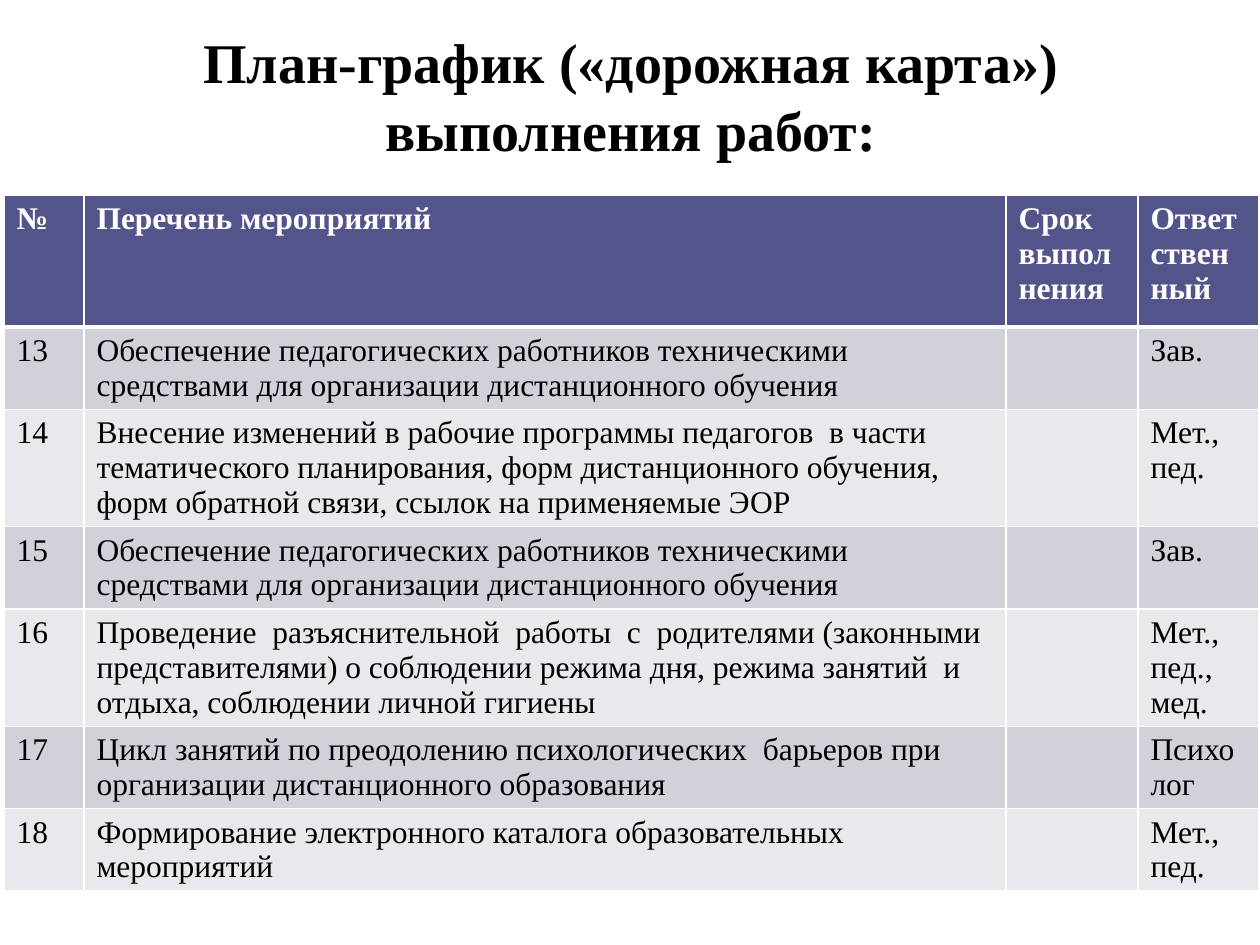
from dataclasses import dataclass

from lxml.etree import SubElement
from pptx import Presentation
from pptx.dml.color import RGBColor as Color
from pptx.enum.text import MSO_ANCHOR as Anchor, PP_ALIGN as Align
from pptx.oxml.ns import qn
from pptx.util import Emu, Pt

SCALE = 914400 / 126


@dataclass(frozen=True)
class Theme:
    font: str = "Times New Roman"
    title_size: int = 32
    table_size: int = 18
    ink: str = "000000"
    white: str = "FFFFFF"
    header: str = "53548A"
    bands: tuple = ("D1D1DA", "E9E9ED")
    line: int = 1
    header_line: int = 3


def px(length):
    return Emu(round(length * SCALE))


def format_text(frame, size, color, bold):
    for para in frame.paragraphs:
        for span in para.runs:
            span.font.name = theme.font
            span.font.size = Pt(size)
            span.font.bold = bold
            span.font.color.rgb = Color.from_string(color)


theme = Theme()
equipment = (
    "Обеспечение педагогических работников техническими средствами "
    "для организации дистанционного обучения"
)
rows = [
    ("№", "Перечень мероприятий", "Срок выполнения", "Ответственный"),
    ("13", equipment, "", "Зав."),
    ("14", "Внесение изменений в рабочие программы педагогов  в части  "
           "тематического планирования, форм дистанционного обучения, "
           "форм обратной связи, ссылок на применяемые ЭОР", "", "Мет., пед."),
    ("15", equipment, "", "Зав."),
    ("16", "Проведение  разъяснительной  работы  с  родителями (законными "
           "представителями) о соблюдении режима дня, режима занятий  и "
           "отдыха, соблюдении личной гигиены", "", "Мет., пед., мед."),
    ("17", "Цикл занятий по преодолению психологических  барьеров при "
           "организации дистанционного образования", "", "Психолог"),
    ("18", "Формирование электронного каталога образовательных мероприятий",
     "", "Мет., пед."),
]
column_widths = [80, 922, 132, 121]
row_heights = [132, 82, 117, 82, 117, 82, 82]

deck = Presentation()
deck.slide_width, deck.slide_height = px(1260), px(945)
page = deck.slides.add_slide(deck.slide_layouts[5])

title = page.shapes.title
title.left, title.top, title.width, title.height = px(64), px(16), px(1134), px(158)
title.text_frame.text = "План-график («дорожная карта») выполнения работ:"
title.text_frame.vertical_anchor = Anchor.MIDDLE
title.text_frame.paragraphs[0].alignment = Align.CENTER
format_text(title.text_frame, theme.title_size, theme.ink, True)

table = page.shapes.add_table(
    len(rows), len(column_widths), px(4), px(195),
    px(sum(column_widths)), px(sum(row_heights)),
).table
for column, width in zip(table.columns, column_widths):
    column.width = px(width)

for row_index, (texts, height) in enumerate(zip(rows, row_heights)):
    table.rows[row_index].height = px(height)
    is_header = row_index == 0
    fill = theme.header if is_header else theme.bands[(row_index - 1) % 2]
    color = theme.white if is_header else theme.ink
    top = theme.header_line if row_index == 1 else theme.line
    bottom = theme.header_line if is_header else theme.line
    borders = {"L": theme.line, "R": theme.line, "T": top, "B": bottom}
    for column_index, text in enumerate(texts):
        cell = table.cell(row_index, column_index)
        if text:
            cell.text_frame.text = text
            format_text(cell.text_frame, theme.table_size, color, is_header)
        properties = cell._tc.get_or_add_tcPr()
        for side, weight in borders.items():
            line = SubElement(properties, qn(f"a:ln{side}"), w=str(Pt(weight)))
            paint = SubElement(line, qn("a:solidFill"))
            SubElement(paint, qn("a:srgbClr"), val=theme.white)
        cell.fill.solid()
        cell.fill.fore_color.rgb = Color.from_string(fill)

deck.save("out.pptx")
